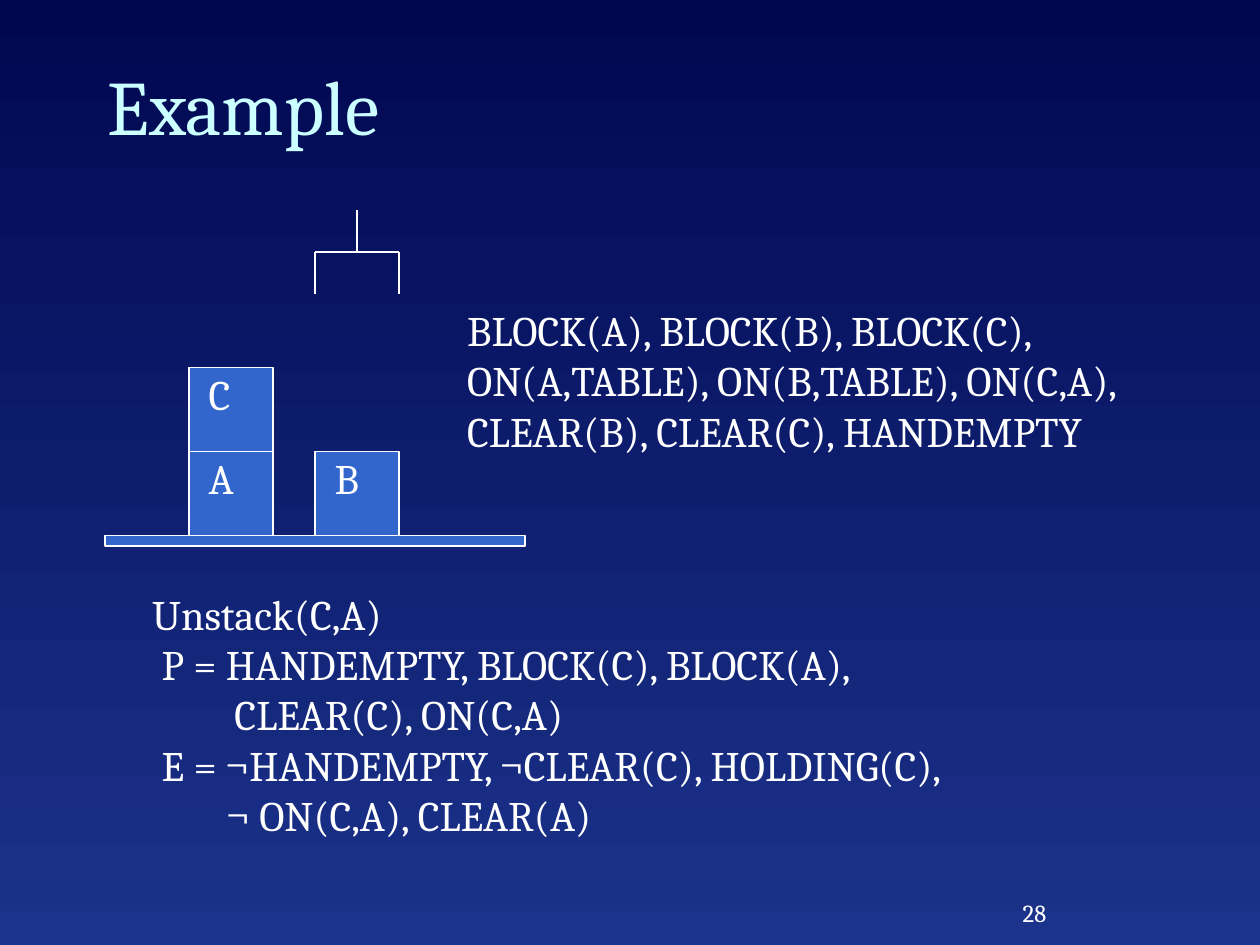
from dataclasses import dataclass

from lxml import etree
from pptx import Presentation
from pptx import util as u
from pptx.dml.color import RGBColor
from pptx.enum import shapes, text
from pptx.oxml.ns import qn


@dataclass(frozen=True)
class Theme:
    font: str = "Cambria"
    sky: str = "000751"
    horizon: str = "1B338A"
    block: str = "3366CC"
    ink: str = "FFFFFF"
    heading: str = "CCFFFF"
    title_size: float = 44
    body_size: float = 24
    number_size: float = 14
    line_width: float = 0.75


THEME = Theme()
BLOCK = 48
TABLE_LEFT, TABLE_TOP = 60, 306
BLOCKS = [("A", 108, 1), ("B", 180, 1), ("C", 108, 2)]
HAND_LEFT, HAND_TOP = 180, 120
INDENT = 3

STATE = [
    ("BLOCK(A), BLOCK(B), BLOCK(C),", INDENT),
    ("ON(A,TABLE), ON(B,TABLE), ON(C,A),", INDENT),
    ("CLEAR(B), CLEAR(C), HANDEMPTY", INDENT),
]
OPERATOR = [
    ("Unstack(C,A)", INDENT),
    ("P = HANDEMPTY, BLOCK(C), BLOCK(A),", 8.4),
    ("CLEAR(C), ON(C,A)", 50),
    ("E = ¬HANDEMPTY, ¬CLEAR(C), HOLDING(C),", 8.4),
    ("¬ ON(C,A), CLEAR(A)", 45.6),
]


def apply(target, **values):
    for name, value in values.items():
        setattr(target, name, value)


def points(*lengths):
    return [u.Pt(length) for length in lengths]


def write(frame, lines, size, color, insets, **layout):
    sides = ("margin_left", "margin_top", "margin_right", "margin_bottom")
    apply(frame, **dict(zip(sides, points(*insets))), **layout)
    for index, (words, indent) in enumerate(lines):
        paragraph = frame.add_paragraph() if index else frame.paragraphs[0]
        paragraph.text = words
        properties = paragraph._p.get_or_add_pPr()
        properties.set("marL", str(u.Pt(indent)))
        properties.set("indent", "0")
        apply(paragraph.font, name=THEME.font, size=u.Pt(size))
        paragraph.font.color.rgb = RGBColor.from_string(color)


def outline(line):
    line.color.rgb = RGBColor.from_string(THEME.ink)
    line.width = u.Pt(THEME.line_width)


def paint_background(slide):
    fill = slide.background.fill
    fill.gradient()
    fill.gradient_angle = 270
    for stop, color, position in zip(fill.gradient_stops, (THEME.sky, THEME.horizon), (0, 1)):
        apply(stop, position=position)
        stop.color.rgb = RGBColor.from_string(color)


def add_title(slide, words):
    title = slide.shapes.title
    sides = ("left", "top", "width", "height")
    apply(title, **dict(zip(sides, points(54, 18, 612, 84))))
    write(title.text_frame, [(words, INDENT)], THEME.title_size, THEME.heading,
          (4.5, 4.5, 10, 4.5), vertical_anchor=text.MSO_ANCHOR.MIDDLE)
    title.text_frame.paragraphs[0].alignment = text.PP_ALIGN.LEFT


def add_text(parent, lines, box):
    label = parent.add_textbox(*points(*box))
    write(label.text_frame, lines, THEME.body_size, THEME.ink, (0, 0, 3, 0), word_wrap=True)


def add_box(parent, box):
    rectangle = parent.add_shape(shapes.MSO_SHAPE.RECTANGLE, *points(*box))
    rectangle.shadow.inherit = False
    rectangle.fill.solid()
    rectangle.fill.fore_color.rgb = RGBColor.from_string(THEME.block)
    outline(rectangle.line)


def add_line(parent, ends):
    line = parent.add_connector(shapes.MSO_CONNECTOR.STRAIGHT, *points(*ends))
    outline(line.line)
    etree.SubElement(line._element.spPr, qn("a:effectLst"))


def add_blocks_world(slide):
    world = slide.shapes.add_group_shape().shapes
    add_box(world, (TABLE_LEFT, TABLE_TOP, 5 * BLOCK, 6))
    for name, left, level in BLOCKS:
        top = TABLE_TOP - level * BLOCK
        add_box(world, (left, top, BLOCK, BLOCK))
        add_text(world, [(name, INDENT)], (left + 8.2, top + 0.4, 29, 36.5))


def add_hand(slide):
    hand = slide.shapes.add_group_shape().shapes
    right, middle = HAND_LEFT + BLOCK, HAND_LEFT + BLOCK / 2
    palm, tips = HAND_TOP + BLOCK / 2, HAND_TOP + BLOCK
    add_line(hand, (HAND_LEFT, palm, right, palm))
    add_line(hand, (middle, HAND_TOP, middle, palm))
    for finger in (HAND_LEFT, right):
        add_line(hand, (finger, palm, finger, tips))


def add_page_number(slide, number):
    label = slide.shapes.add_textbox(*points(579.6, 509.8, 23, 27.4))
    write(label.text_frame, [(number, 0)], THEME.number_size, THEME.ink,
          (0, 3.6, 0, 3.6), word_wrap=False)
    label.text_frame.paragraphs[0].alignment = text.PP_ALIGN.CENTER


def main():
    deck = Presentation()
    apply(deck, slide_width=u.Pt(720), slide_height=u.Pt(540))
    slide = deck.slides.add_slide(deck.slide_layouts[5])
    paint_background(slide)
    add_page_number(slide, "28")
    add_title(slide, "Example")
    add_blocks_world(slide)
    add_hand(slide)
    add_text(slide.shapes, OPERATOR, (84, 336, 522, 152.6))
    add_text(slide.shapes, STATE, (264, 174, 443, 95))
    deck.save("out.pptx")


if __name__ == "__main__":
    main()
